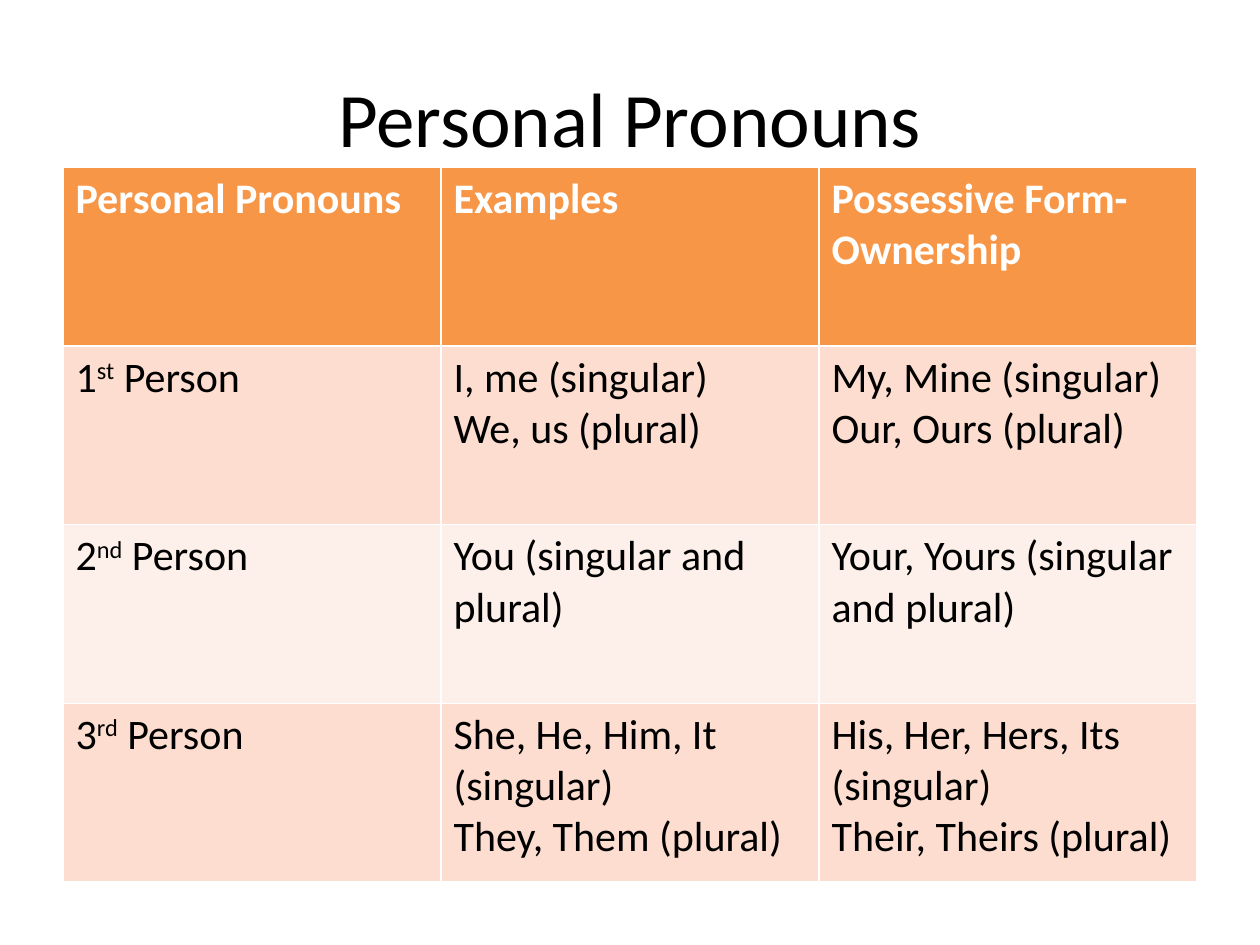
"""Build a slide with a table of personal pronouns by grammatical person."""
from pptx import Presentation
from pptx.dml.color import RGBColor
from pptx.enum.text import MSO_ANCHOR, PP_ALIGN
from pptx.util import Inches, Pt

FONT = "Calibri"
BLACK = RGBColor(0x00, 0x00, 0x00)
WHITE = RGBColor(0xFF, 0xFF, 0xFF)
ORANGE = RGBColor(0xF7, 0x96, 0x46)
PEACH = RGBColor(0xFC, 0xDD, 0xCF)
PALE_PEACH = RGBColor(0xFD, 0xEF, 0xE9)

HEADINGS = ["Personal Pronouns", "Examples", "Possessive Form-Ownership"]
PERSONS = [
    (("1", "st"), "I, me (singular)\nWe, us (plural)",
     "My, Mine (singular)\nOur, Ours (plural)"),
    (("2", "nd"), "You (singular and plural)",
     "Your, Yours (singular and plural)"),
    (("3", "rd"), "She, He, Him, It (singular)\nThey, Them (plural)",
     "His, Her, Hers, Its (singular)\nTheir, Theirs (plural)"),
]


def format_text(frame, size, color, bold=False):
    for paragraph in frame.paragraphs:
        for run in paragraph.runs:
            run.font.name = FONT
            run.font.size = Pt(size)
            run.font.bold = bold
            run.font.color.rgb = color


presentation = Presentation()
presentation.slide_width = Inches(10)
presentation.slide_height = Inches(7.5)
slide = presentation.slides.add_slide(presentation.slide_layouts[5])

margin = int(presentation.slide_width * 0.05)
content_width = presentation.slide_width - 2 * margin

title = slide.shapes.title
title.left, title.top = margin, Inches(0.3)
title.width, title.height = content_width, Inches(1.25)
title.text_frame.text = "Personal Pronouns"
title.text_frame.vertical_anchor = MSO_ANCHOR.MIDDLE
title.text_frame.paragraphs[0].alignment = PP_ALIGN.CENTER
format_text(title.text_frame, 44, BLACK)

pronouns = slide.shapes.add_table(
    len(PERSONS) + 1, len(HEADINGS),
    margin, Inches(1.33), content_width, Inches(5.67),
).table

for column, heading in enumerate(HEADINGS):
    cell = pronouns.cell(0, column)
    cell.text_frame.text = heading
    cell.fill.solid()
    cell.fill.fore_color.rgb = ORANGE
    format_text(cell.text_frame, 24, WHITE, bold=True)

for row, ((number, ordinal), examples, possessives) in enumerate(PERSONS, 1):
    person = pronouns.cell(row, 0).text_frame.paragraphs[0]
    for part in (number, ordinal, " Person"):
        person.add_run().text = part
    person.runs[1].font._element.set("baseline", "30000")
    pronouns.cell(row, 1).text_frame.text = examples
    pronouns.cell(row, 2).text_frame.text = possessives
    for cell in pronouns.rows[row].cells:
        cell.fill.solid()
        cell.fill.fore_color.rgb = PEACH if row % 2 else PALE_PEACH
        format_text(cell.text_frame, 24, BLACK)

presentation.save("out.pptx")
